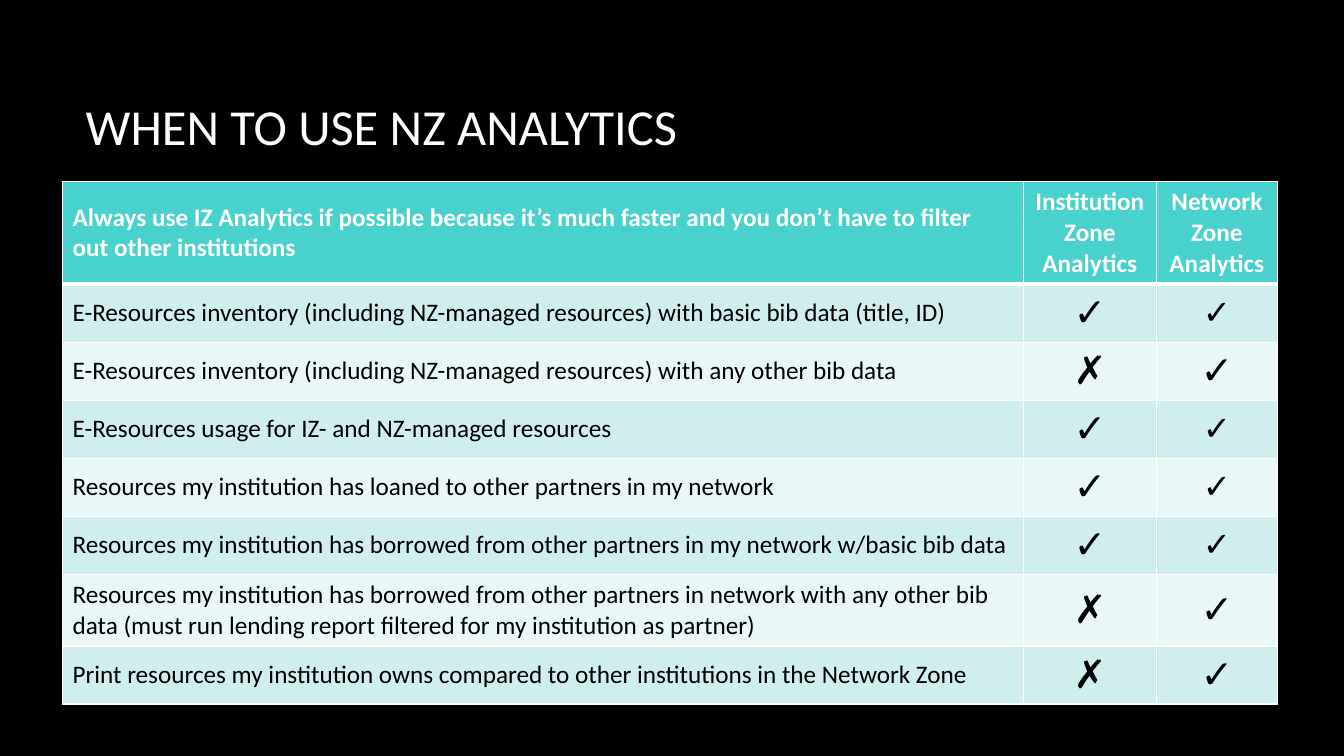
from lxml import etree
from pptx import Presentation
from pptx import util as u
from pptx.dml.color import RGBColor
from pptx.enum import text
from pptx.oxml.ns import qn

FONT = "Calibri"
WHITE, BLACK, TEAL = "FFFFFF", "000000", "49D1CD"
BANDS = ("D0EEED", "E9F7F6")
YES, NO = "✓", "✗"

HEADINGS = (
    "Always use IZ Analytics if possible because it’s much faster and you "
    "don’t have to filter out other institutions",
    "Institution Zone Analytics",
    "Network Zone Analytics",
)
# Need, whether Institution Zone Analytics covers it, row height
NEEDS = (
    ("E-Resources inventory (including NZ-managed resources) with basic bib data (title, ID)", YES, 0.57),
    ("E-Resources inventory (including NZ-managed resources) with any other bib data", NO, 0.57),
    ("E-Resources usage for IZ- and NZ-managed resources", YES, 0.57),
    ("Resources my institution has loaned to other partners in my network", YES, 0.57),
    ("Resources my institution has borrowed from other partners in my network w/basic bib data", YES, 0.57),
    ("Resources my institution has borrowed from other partners in network with any other bib data "
     "(must run lending report filtered for my institution as partner)", NO, 0.7),
    ("Print resources my institution owns compared to other institutions in the Network Zone", NO, 0.57),
)
HEADING_HEIGHT = 1.02
COLUMN_WIDTHS = (9.53, 1.32, 1.2)


def color(value):
    return RGBColor.from_string(value)


def style_paragraph(paragraph, size, ink, align, bold=False):
    paragraph.alignment = align
    font = paragraph.font
    font.name, font.size, font.bold = FONT, u.Pt(size), bold
    font.color.rgb = color(ink)


def border_cell(cell, bottom):
    """Draw white 1 pt edges, with the bottom edge in the given points."""
    properties = cell._tc.get_or_add_tcPr()
    edges = (("a:lnL", 1), ("a:lnR", 1), ("a:lnT", 1), ("a:lnB", bottom))
    for position, (tag, width) in enumerate(edges):
        line = etree.Element(qn(tag), w=str(u.Pt(width)))
        fill = etree.SubElement(line, qn("a:solidFill"))
        etree.SubElement(fill, qn("a:srgbClr"), val=WHITE)
        properties.insert(position, line)


def fill_cell(cell, words, background, size, ink, align, bold=False, bottom=1):
    cell.text = words
    cell.vertical_anchor = text.MSO_ANCHOR.MIDDLE
    cell.fill.solid()
    cell.fill.fore_color.rgb = color(background)
    style_paragraph(cell.text_frame.paragraphs[0], size, ink, align, bold)
    border_cell(cell, bottom)


def add_title(slide, left, top, width, height):
    title = slide.shapes.title
    title.left, title.top = u.Inches(left), u.Inches(top)
    title.width, title.height = u.Inches(width), u.Inches(height)
    title.text_frame.text = "WHEN TO USE NZ ANALYTICS"
    title.text_frame.vertical_anchor = text.MSO_ANCHOR.MIDDLE
    style_paragraph(title.text_frame.paragraphs[0], 36, WHITE, text.PP_ALIGN.LEFT)


def add_comparison(slide, left, top):
    heights = [HEADING_HEIGHT] + [height for _, _, height in NEEDS]
    table = slide.shapes.add_table(
        len(heights), len(COLUMN_WIDTHS), u.Inches(left), u.Inches(top),
        u.Inches(sum(COLUMN_WIDTHS)), u.Inches(sum(heights))).table
    for column, width in zip(table.columns, COLUMN_WIDTHS):
        column.width = u.Inches(width)
    for row, height in zip(table.rows, heights):
        row.height = u.Inches(height)

    aligns = (text.PP_ALIGN.LEFT, text.PP_ALIGN.CENTER, text.PP_ALIGN.CENTER)
    for column, heading in enumerate(HEADINGS):
        fill_cell(table.cell(0, column), heading, TEAL, 18, WHITE,
                  aligns[column], bold=True, bottom=3)
    for row, (need, institution, _) in enumerate(NEEDS, start=1):
        # The network mark is larger where it is the only way
        network_size = 28 if institution == NO else 24
        entries = ((need, 18), (institution, 28), (YES, network_size))
        for column, (words, size) in enumerate(entries):
            fill_cell(table.cell(row, column), words, BANDS[(row - 1) % 2],
                      size, BLACK, aligns[column])


def main():
    deck = Presentation()
    deck.slide_width, deck.slide_height = u.Inches(13.33), u.Inches(7.5)
    slide = deck.slides.add_slide(deck.slide_layouts[5])
    slide.background.fill.solid()
    slide.background.fill.fore_color.rgb = color(BLACK)
    add_title(slide, 0.75, 0.67, 11.08, 1.14)
    add_comparison(slide, 0.62, 1.8)
    deck.save("out.pptx")


if __name__ == "__main__":
    main()
